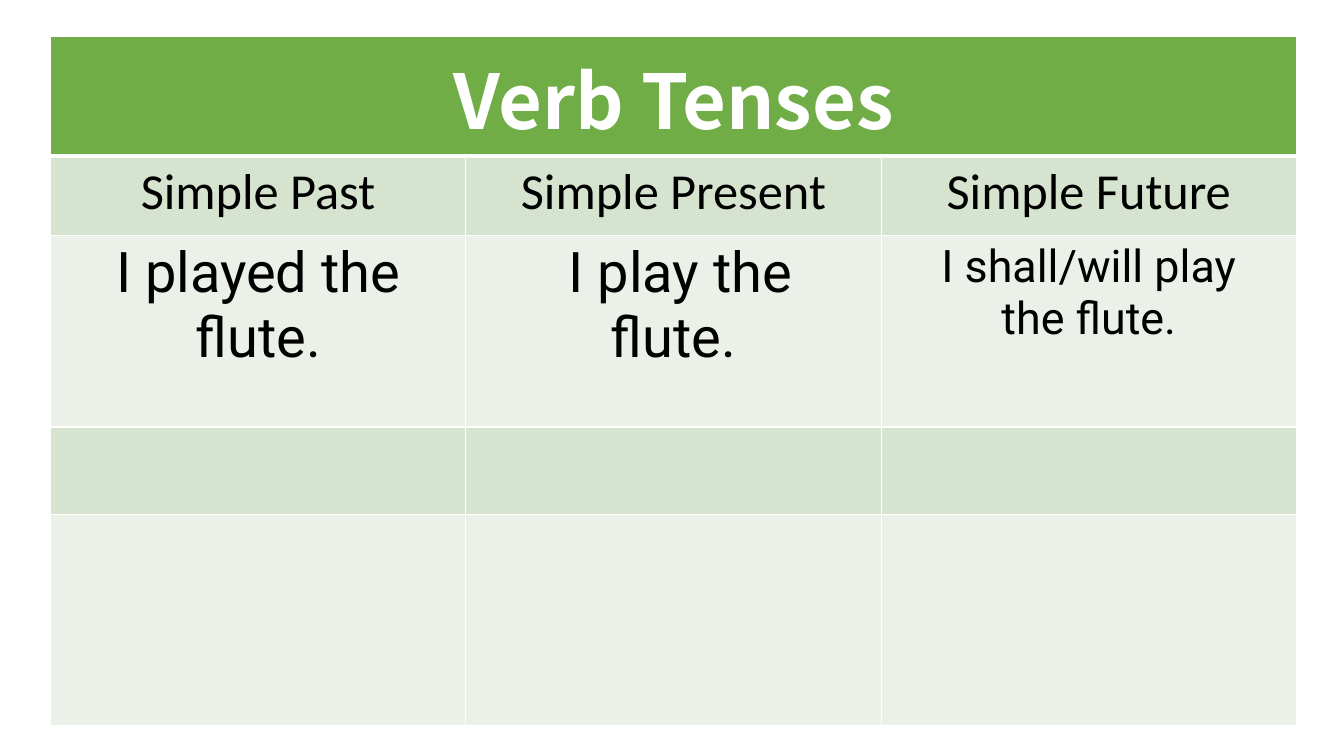
from lxml.etree import SubElement
from pptx import Presentation
from pptx.dml.color import RGBColor
from pptx.enum.text import PP_ALIGN as Align
from pptx.oxml.ns import qn
from pptx.util import Inches, Pt

WHITE = RGBColor(0xFF, 0xFF, 0xFF)
BLACK = RGBColor(0x00, 0x00, 0x00)
GREEN = RGBColor(0x70, 0xAD, 0x47)
BAND_DARK = RGBColor(0xD5, 0xE3, 0xCF)
BAND_LIGHT = RGBColor(0xEB, 0xF1, 0xE9)

LEFT, TOP = 0.5, 0.36
COLUMN_WIDTH = 4.12
COLUMN_COUNT = 3

# Each row: height, fill, font name, text colour, (text, size) per filled cell
ROWS = [
    (1.13, GREEN, "Noto Sans CJK JP", WHITE, [("Verb Tenses", 54)]),
    (0.79, BAND_DARK, "Calibri", BLACK,
     [("Simple Past", 36), ("Simple Present", 36), ("Simple Future", 36)]),
    (1.9, BAND_LIGHT, "Roboto", BLACK,
     [("I played the\nflute.", 40), (" I play the\nflute.", 40),
      ("I shall/will play\nthe flute.", 32)]),
    (0.87, BAND_DARK, "Calibri", BLACK, []),
    (2.09, BAND_LIGHT, "Calibri", BLACK, []),
]


def add_borders(cell, top_width, bottom_width):
    """Draw white lines on the four sides of a cell."""
    properties = cell._tc.get_or_add_tcPr()
    widths = {"a:lnL": 1, "a:lnR": 1, "a:lnT": top_width, "a:lnB": bottom_width}
    for side, width in widths.items():
        line = SubElement(properties, qn(side), w=str(Pt(width)))
        fill = SubElement(line, qn("a:solidFill"))
        SubElement(fill, qn("a:srgbClr"), val=str(WHITE))


presentation = Presentation()
presentation.slide_width = Inches(13.33)
presentation.slide_height = Inches(7.5)
slide = presentation.slides.add_slide(presentation.slide_layouts[6])

# Table grid with a heading across all columns
table = slide.shapes.add_table(
    len(ROWS), COLUMN_COUNT, Inches(LEFT), Inches(TOP),
    Inches(COLUMN_COUNT * COLUMN_WIDTH), Inches(sum(row[0] for row in ROWS)),
).table
for column in table.columns:
    column.width = Inches(COLUMN_WIDTH)
table.cell(0, 0).merge(table.cell(0, COLUMN_COUNT - 1))

# Fills, borders and wording
for row_index, (height, fill_color, font_name, text_color, entries) in enumerate(ROWS):
    table.rows[row_index].height = Inches(height)
    for column_index in range(COLUMN_COUNT):
        cell = table.cell(row_index, column_index)
        add_borders(cell, 3 if row_index == 1 else 1, 3 if row_index == 0 else 1)
        cell.fill.solid()
        cell.fill.fore_color.rgb = fill_color
    for column_index, (text, size) in enumerate(entries):
        text_frame = table.cell(row_index, column_index).text_frame
        text_frame.text = text
        for paragraph in text_frame.paragraphs:
            paragraph.alignment = Align.CENTER
            paragraph.font.name = font_name
            paragraph.font.size = Pt(size)
            paragraph.font.bold = row_index == 0
            paragraph.font.color.rgb = text_color

presentation.save("out.pptx")
